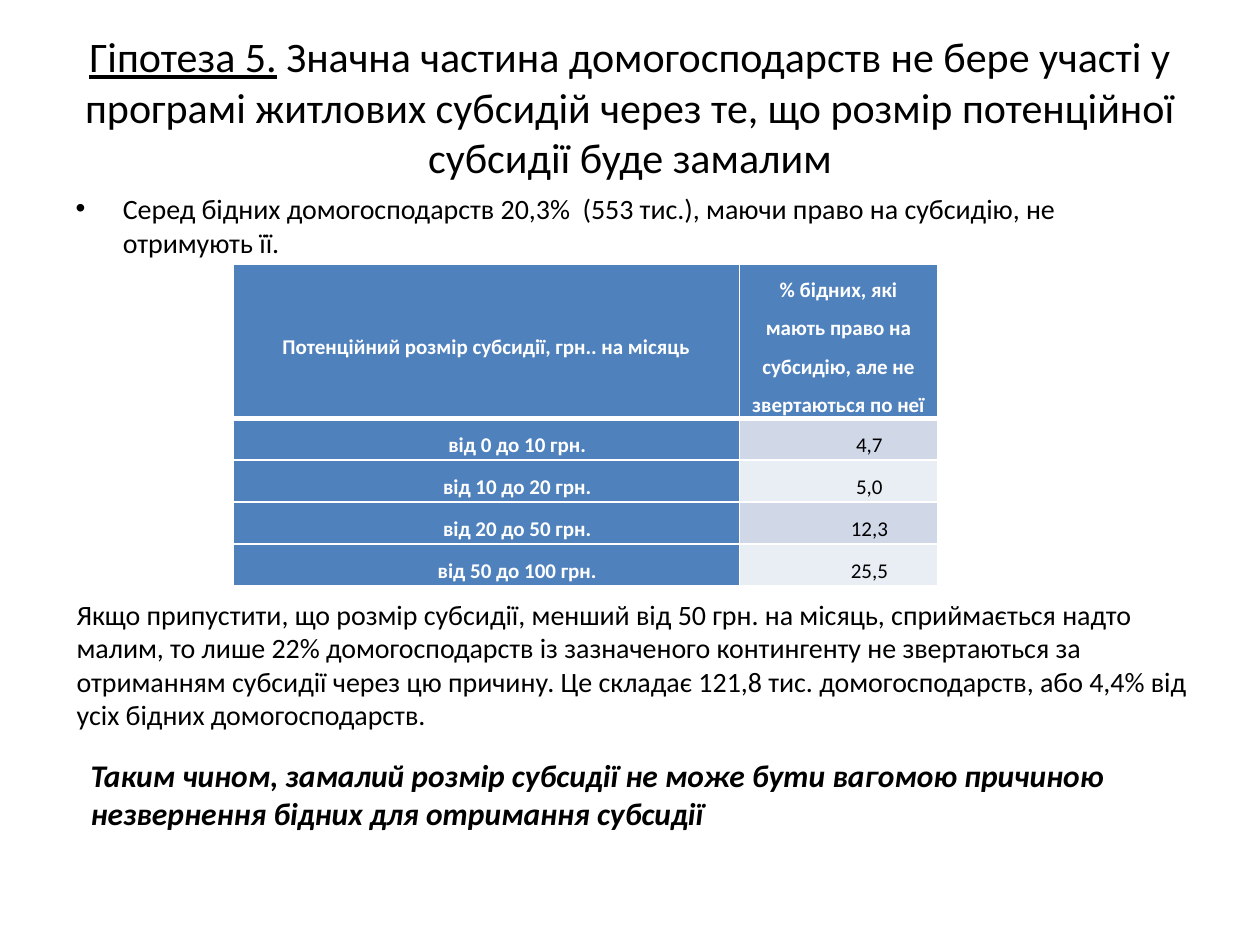
from pptx import Presentation
from pptx.dml.color import RGBColor
from pptx.enum.text import MSO_ANCHOR, MSO_AUTO_SIZE, PP_ALIGN
from pptx.oxml import parse_xml
from pptx.oxml.ns import nsdecls
from pptx.util import Inches, Pt

CENTER, LEFT = PP_ALIGN.CENTER, PP_ALIGN.LEFT
MIDDLE, TOP = MSO_ANCHOR.MIDDLE, MSO_ANCHOR.TOP
NO_FIT = MSO_AUTO_SIZE.NONE

COLORS = {
    "text": "000000",
    "light": "FFFFFF",
    "accent": "4F81BD",
    "band_dark": "D0D8E8",
    "band_light": "E9EDF4",
}
COLUMNS, ROWS = 100, 75
TABLE_ROWS = [
    ("Потенційний розмір субсидії, грн.. на місяць",
     "% бідних, які мають право на субсидію, але не звертаються по неї"),
    ("від 0 до 10 грн.", "4,7"),
    ("від 10 до 20 грн.", "5,0"),
    ("від 20 до 50 грн.", "12,3"),
    ("від 50 до 100 грн.", "25,5"),
]


class SlideBuilder:
    """Holds the style and the current slide; lengths are grid columns and rows."""

    font_name = "Calibri"

    def __init__(self, presentation):
        self.column = presentation.slide_width / COLUMNS
        self.row = presentation.slide_height / ROWS
        self.slide = presentation.slides.add_slide(presentation.slide_layouts[1])

    def box(self, left, top, width, height):
        return (round(left * self.column), round(top * self.row),
                round(width * self.column), round(height * self.row))

    def add_text(self, paragraph, text, size, color="text", **formats):
        run = paragraph.add_run()
        run.text = text
        values = {"name": self.font_name, "size": Pt(size), **formats}
        for name, value in values.items():
            setattr(run.font, name, value)
        run.font.color.rgb = RGBColor.from_string(COLORS[color])

    def placeholder(self, index, area, runs, size, align, anchor):
        shape = self.slide.placeholders[index]
        shape.left, shape.top, shape.width, shape.height = self.box(*area)
        frame = shape.text_frame
        for name, value in {"auto_size": NO_FIT, "word_wrap": True,
                            "vertical_anchor": anchor}.items():
            setattr(frame, name, value)
        paragraph = frame.paragraphs[0]
        paragraph.alignment = align
        for text, formats in runs:
            self.add_text(paragraph, text, size, **formats)

    def text_box(self, area, text, size, **formats):
        frame = self.slide.shapes.add_textbox(*self.box(*area)).text_frame
        frame.word_wrap = True
        self.add_text(frame.paragraphs[0], text, size, **formats)

    def borders(self, cell, widths):
        properties = cell._tc.get_or_add_tcPr()
        for side, width in widths.items():
            properties.append(parse_xml(
                f'<a:ln{side} {nsdecls("a")} w="{Pt(width)}"><a:solidFill>'
                f'<a:srgbClr val="{COLORS["light"]}"/></a:solidFill></a:ln{side}>'))

    def cell(self, cell, text, row_index, column_index):
        is_header = row_index == 0
        is_label = is_header or column_index == 0
        band = "band_dark" if row_index % 2 else "band_light"

        self.borders(cell, {"L": 1, "R": 1, "T": 3 if row_index == 1 else 1,
                            "B": 3 if is_header else 1})
        cell.fill.solid()
        cell.fill.fore_color.rgb = RGBColor.from_string(
            COLORS["accent" if is_label else band])
        for name, value in {"margin_left": Inches(0.07), "margin_right": Inches(0.07),
                            "margin_top": 0, "margin_bottom": 0,
                            "vertical_anchor": MIDDLE}.items():
            setattr(cell, name, value)

        paragraph = cell.text_frame.paragraphs[0]
        paragraph.alignment = CENTER
        paragraph.line_spacing = 1.5
        if not is_header:
            paragraph._p.get_or_add_pPr().set("indent", str(Inches(0.49)))
        self.add_text(paragraph, text, 12, "light" if is_label else "text",
                      bold=is_label)

    def table(self, left, top, widths, heights, rows):
        area = self.box(left, top, sum(widths), sum(heights))
        table = self.slide.shapes.add_table(len(rows), len(widths), *area).table
        for column, width in zip(table.columns, widths):
            column.width = round(width * self.column)
        for row, height in zip(table.rows, heights):
            row.height = round(height * self.row)
        for row_index, texts in enumerate(rows):
            for column_index, text in enumerate(texts):
                self.cell(table.cell(row_index, column_index), text,
                          row_index, column_index)


def main():
    presentation = Presentation()
    presentation.slide_width, presentation.slide_height = Inches(10), Inches(7.5)
    builder = SlideBuilder(presentation)

    # Title: the hypothesis
    builder.placeholder(0, (5, 3, 90, 10.9), [
        ("Гіпотеза 5.", {"underline": True}),
        (" Значна частина домогосподарств не бере участі у програмі житлових "
         "субсидій через те, що розмір потенційної субсидії буде замалим",
         {"underline": False}),
    ], 24, CENTER, MIDDLE)

    # Bullet above the table
    builder.placeholder(1, (5, 14.7, 90, 52.3), [
        ("Серед бідних домогосподарств 20,3%  (553 тис.), маючи право на "
         "субсидію, не отримують її.", {}),
    ], 16, LEFT, TOP)

    # Table of potential subsidy sizes
    heights = [12.1] + [3.33] * (len(TABLE_ROWS) - 1)
    builder.table(18.5, 21, [40.2, 15.7], heights, TABLE_ROWS)

    # Conclusion, then explanation of the figures
    builder.text_box((6.2, 59.5, 88.2, 7.1),
                     "Таким чином, замалий розмір субсидії не може бути вагомою "
                     "причиною незвернення бідних для отримання субсидії",
                     18, bold=True, italic=True)
    builder.text_box((5.1, 46.9, 90.3, 11.8),
                     "Якщо припустити, що розмір субсидії, менший від 50 грн. на "
                     "місяць, сприймається надто малим, то лише 22% домогосподарств "
                     "із зазначеного контингенту не звертаються за отриманням субсидії "
                     "через цю причину. Це складає 121,8 тис. домогосподарств, або "
                     "4,4% від усіх бідних домогосподарств.", 16)

    presentation.save("out.pptx")


if __name__ == "__main__":
    main()
